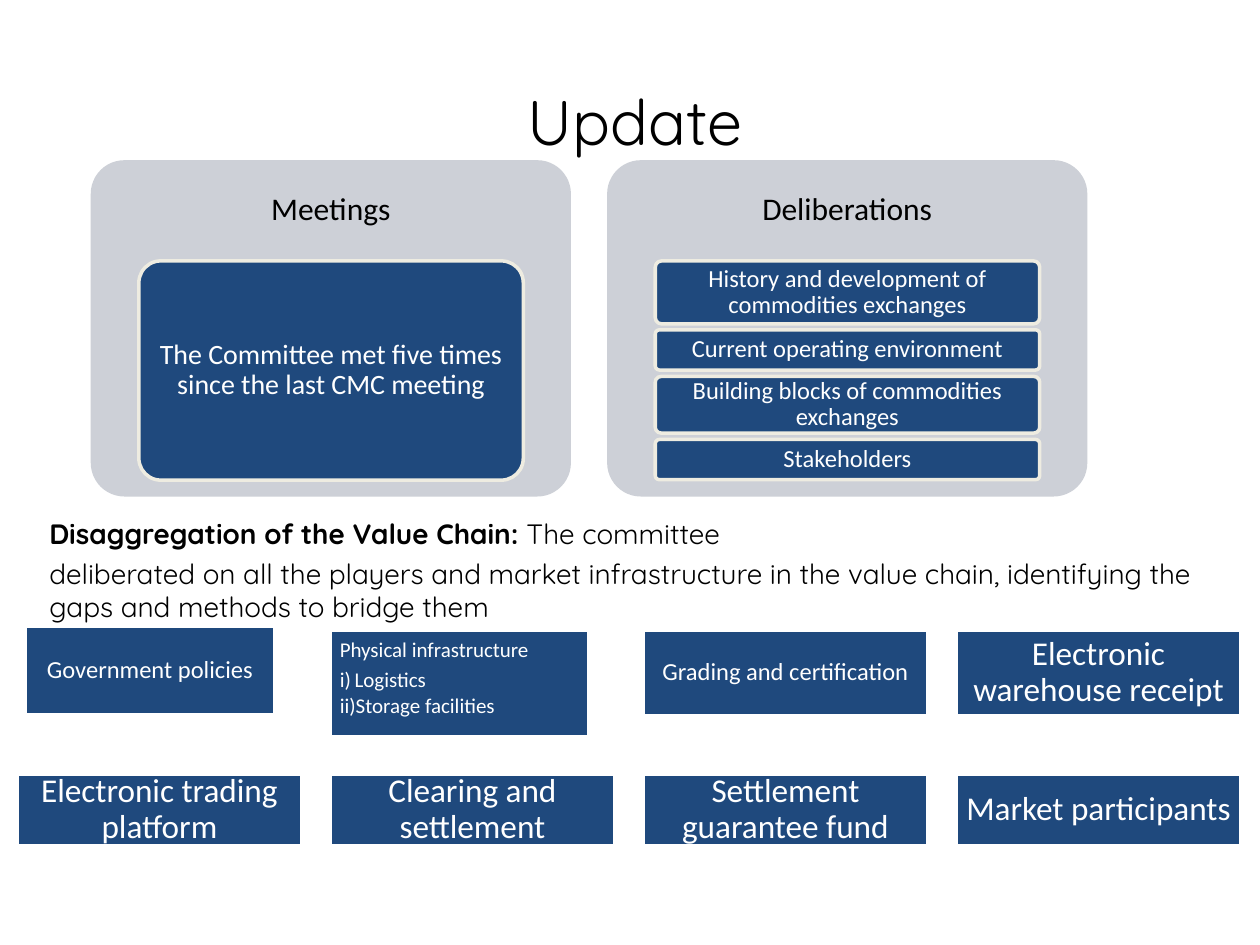
"""Build the committee update slide with meeting cards and value chain boxes."""
from lxml.etree import SubElement
from pptx import Presentation
from pptx.dml.color import RGBColor
from pptx.enum.shapes import MSO_SHAPE as Shape
from pptx.enum.text import MSO_ANCHOR as Anchor, MSO_AUTO_SIZE as AutoSize, PP_ALIGN as Align
from pptx.oxml.ns import qn
from pptx.util import Cm, Pt

NAVY = RGBColor(0x1F, 0x49, 0x7D)
GREY = RGBColor(0xCD, 0xD0, 0xD7)
CREAM = RGBColor(0xEE, 0xEC, 0xE1)
WHITE = RGBColor(0xFF, 0xFF, 0xFF)
BLACK = RGBColor(0x00, 0x00, 0x00)


def set_format(target, values):
    for name, value in values.items():
        setattr(target, name, value)


def add_box(kind, position, text, size, fill, line, color, margins):
    shape = slide.shapes.add_shape(kind, *[Cm(length) for length in position])
    shape.shadow.inherit = False
    shape.fill.solid()
    shape.fill.fore_color.rgb = fill
    if line is None:
        shape.line.fill.background()
    else:
        shape.line.color.rgb = line
        shape.line.width = Pt(2)
    if kind == Shape.ROUNDED_RECTANGLE:
        shape.adjustments[0] = 0.1
    frame = shape.text_frame
    set_format(frame, {"word_wrap": True, "vertical_anchor": Anchor.MIDDLE})
    sides = ("margin_left", "margin_top", "margin_right", "margin_bottom")
    set_format(frame, {side: Cm(margin) for side, margin in zip(sides, margins)})
    frame.text = text
    for paragraph in frame.paragraphs:
        set_format(paragraph, {"alignment": Align.CENTER, "line_spacing": 0.9})
        font = paragraph.runs[0].font
        set_format(font, {"name": "Calibri", "size": Pt(size)})
        font.color.rgb = color
    return shape


presentation = Presentation()
set_format(presentation, {"slide_width": Cm(25.4), "slide_height": Cm(19.05)})
slide = presentation.slides.add_slide(presentation.slide_layouts[1])

title = slide.shapes.title
set_format(title, {"left": Cm(0.5), "top": Cm(2.1), "width": Cm(24.6), "height": Cm(0.67)})
title.text_frame.text = "Update"
set_format(title.text_frame, {"vertical_anchor": Anchor.MIDDLE, "auto_size": AutoSize.NONE})
title.text_frame.paragraphs[0].alignment = Align.CENTER
title_font = title.text_frame.paragraphs[0].runs[0].font
set_format(title_font, {"name": "Quicksand", "size": Pt(36)})
title_font.color.rgb = BLACK

body = slide.placeholders[1]
set_format(body, {"left": Cm(0.74), "top": Cm(9.47), "width": Cm(24.66), "height": Cm(2.34)})
set_format(body.text_frame, {"auto_size": AutoSize.NONE, "margin_top": Cm(0.95)})
body_lines = [
    [("Disaggregation of the Value Chain:", True), (" The committee", False)],
    [("deliberated on all the players and market infrastructure in the value chain, "
      "identifying the gaps and methods to bridge them", False)],
]
for index, parts in enumerate(body_lines):
    paragraph = body.text_frame.add_paragraph() if index else body.text_frame.paragraphs[0]
    properties = paragraph._p.get_or_add_pPr()
    properties.set("marL", "0")
    properties.set("indent", "0")
    SubElement(properties, qn("a:buNone"))
    paragraph.space_before = Pt(3.2 * index)
    for text, bold in parts:
        run = paragraph.add_run()
        run.text = text
        set_format(run.font, {"name": "Quicksand", "size": Pt(16), "bold": bold})
        run.font.color.rgb = BLACK

LEFT, PITCH, WIDTH = 0.35, 6.31, 5.73
ROW_1, ROW_2 = 12.7, 15.6
chain_boxes = [
    ("Government policies", 14, (0.51, 12.62, 5.03, 1.8)),
    ("Physical infrastructure\nLogistics\nStorage facilities", 12, (LEFT + PITCH, ROW_1, 5.21, 2.16)),
    ("Grading and certification", 14, (LEFT + 2 * PITCH, ROW_1, WIDTH, 1.73)),
    ("Electronic warehouse receipt", 19, (LEFT + 3 * PITCH, ROW_1, WIDTH, 1.73)),
]
second_row = ["Electronic trading platform", "Clearing and settlement",
              "Settlement guarantee fund", "Market participants"]
for column, text in enumerate(second_row):
    chain_boxes.append((text, 19, (LEFT + column * PITCH, ROW_2, WIDTH, 1.45)))

for text, size, position in chain_boxes:
    shape = add_box(Shape.RECTANGLE, position, text, size, NAVY, WHITE, WHITE, [0.19] * 4)
    heading, *items = shape.text_frame.paragraphs
    if items:
        shape.text_frame.vertical_anchor = Anchor.TOP
        set_format(heading, {"alignment": Align.LEFT, "space_after": Pt(4)})
    for paragraph in items:
        properties = paragraph._p.get_or_add_pPr()
        properties.set("marL", str(Cm(0.3)))
        properties.set("indent", str(-Cm(0.3)))
        SubElement(properties, qn("a:buAutoNum"), type="romanLcParenR")
        set_format(paragraph, {"level": 1, "alignment": Align.LEFT, "space_after": Pt(2)})

cards = [
    ("Meetings", 1.83, 16, [
        ("The Committee met five times since the last CMC meeting", 5.26, 4.42)]),
    ("Deliberations", 12.24, 14, [
        ("History and development of commodities exchanges", 5.26, 1.27),
        ("Current operating environment", 6.65, 0.81),
        ("Building blocks of commodities exchanges", 7.59, 1.14),
        ("Stakeholders", 8.86, 0.81)]),
]
for heading, left, size, items in cards:
    add_box(Shape.ROUNDED_RECTANGLE, (left, 3.23, 9.68, 6.78), heading, 18,
            GREY, None, BLACK, (0.18, 0.18, 0.18, 4.93))
    for text, top, height in items:
        add_box(Shape.ROUNDED_RECTANGLE, (left + 0.97, top, 7.75, height), text, size,
                NAVY, CREAM, WHITE, (0.1, 0.08, 0.1, 0.08))

presentation.save("out.pptx")
